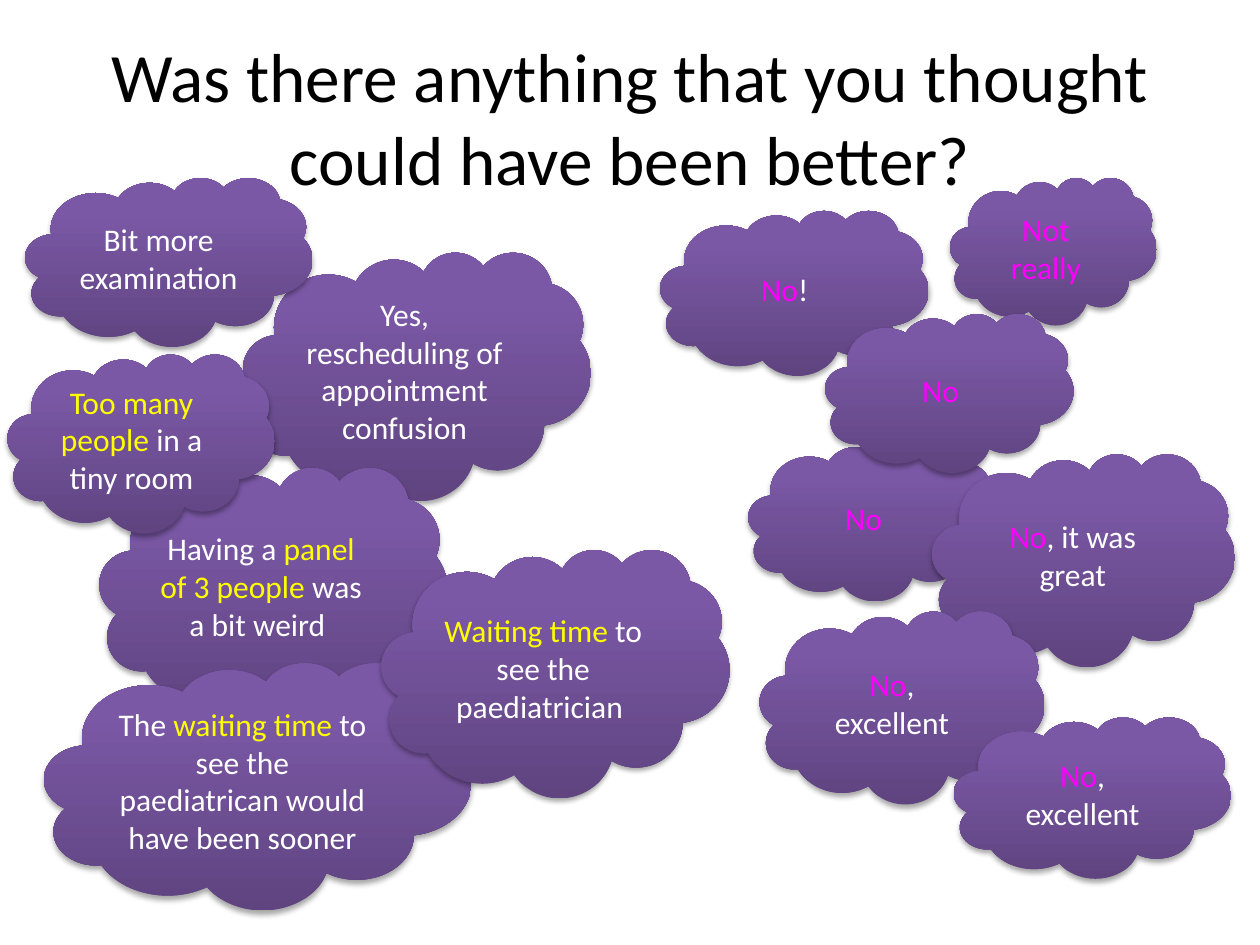
from lxml.etree import SubElement
from pptx import Presentation
from pptx.dml.color import RGBColor
from pptx.enum.shapes import MSO_SHAPE
from pptx.enum.text import MSO_ANCHOR, PP_ALIGN
from pptx.oxml import parse_xml
from pptx.oxml.ns import nsdecls, qn
from pptx.util import Inches, Pt

COLOURS = {
    "title": "000000",
    "plain": "FFFFFF",
    "problem": "FFFF00",
    "no": "FF00FF",
    "shadow": "000000",
}
CLOUD_STOPS = [(0, "5F4480"), (80, "7B58A6"), (100, "7C57A8")]

# Back to front: left, top, width, height, then (words, colour) pieces
ANSWERS = [
    (1.93, 2, 2.76, 1.97, [("Yes, rescheduling of appointment confusion", "plain")]),
    (5.24, 1.67, 2.13, 1.31, [("No", "no"), ("!", "plain")]),
    (0.2, 1.41, 2.28, 1.34, [("Bit more examination", "plain")]),
    (5.94, 3.51, 1.97, 1.26, [("No", "no")]),
    (7.4, 3.6, 2.4, 1.69, [("No", "no"), (", it was great", "plain")]),
    (7.54, 1.41, 1.64, 1.17, [("Not really", "no")]),
    (0.79, 3.71, 2.76, 1.97, [("Having a ", "plain"), ("panel of 3 people ", "problem"),
                              ("was a bit weird ", "plain")]),
    (0.35, 5.26, 3.39, 1.96, [("The ", "plain"), ("waiting time ", "problem"),
                              ("to see the paediatrican would have been sooner", "plain")]),
    (6.55, 2.49, 1.97, 1.26, [("No", "no")]),
    (0.06, 2.81, 2.12, 1.42, [("Too many people ", "problem"), ("in a tiny room", "plain")]),
    (6.03, 4.85, 2.26, 1.53, [("No", "no"), (", excellent", "plain")]),
    (3.03, 4.36, 2.76, 1.97, [("Waiting time ", "problem"),
                              ("to see the paediatrician ", "plain")]),
    (7.57, 5.69, 2.2, 1.28, [("No", "no"), (", excellent", "plain")]),
]


class FeedbackSlide:
    font = "Calibri"

    def __init__(self, slide):
        self.slide = slide

    def set_text(self, shape, pieces, size):
        frame = shape.text_frame
        frame.word_wrap = True
        frame.vertical_anchor = MSO_ANCHOR.MIDDLE
        paragraph = frame.paragraphs[0]
        paragraph.alignment = PP_ALIGN.CENTER
        paragraph.font.name = self.font
        paragraph.font.size = Pt(size)
        for words, colour in pieces:
            run = paragraph.add_run()
            run.text = words
            run.font.color.rgb = RGBColor.from_string(COLOURS[colour])

    def title(self, left, top, width, height, words):
        box = self.slide.shapes.add_textbox(
            Inches(left), Inches(top), Inches(width), Inches(height))
        self.set_text(box, [(words, "title")], 39.6)

    def cloud(self, left, top, width, height, pieces):
        cloud = self.slide.shapes.add_shape(
            MSO_SHAPE.CLOUD, Inches(left), Inches(top), Inches(width), Inches(height))
        self.shade(cloud)
        cloud.line.fill.background()
        self.drop_shadow(cloud)
        self.set_text(cloud, pieces, 18)

    def shade(self, shape):
        """Fill with a three-stop gradient, dark at the bottom."""
        stops = "".join(
            f'<a:gs pos="{percent * 1000}"><a:srgbClr val="{colour}"/></a:gs>'
            for percent, colour in CLOUD_STOPS)
        shape._element.spPr.append(parse_xml(
            f'<a:gradFill {nsdecls("a")} rotWithShape="1"><a:gsLst>{stops}</a:gsLst>'
            '<a:lin ang="16200000" scaled="0"/></a:gradFill>'))

    def drop_shadow(self, shape):
        shape.shadow.inherit = False
        effects = shape._element.spPr.find(qn("a:effectLst"))
        shadow = SubElement(effects, qn("a:outerShdw"), blurRad=str(Pt(3.1)),
                            dist=str(Pt(1.8)), dir="5400000", rotWithShape="0")
        colour = SubElement(shadow, qn("a:srgbClr"), val=COLOURS["shadow"])
        SubElement(colour, qn("a:alpha"), val="35000")


def main():
    deck = Presentation()
    deck.slide_width, deck.slide_height = Inches(10), Inches(7.5)
    feedback = FeedbackSlide(deck.slides.add_slide(deck.slide_layouts[6]))
    feedback.title(0.5, 0.3, 9, 1.25,
                   "Was there anything that you thought could have been better?")
    for answer in ANSWERS:
        feedback.cloud(*answer)
    deck.save("out.pptx")


if __name__ == "__main__":
    main()
